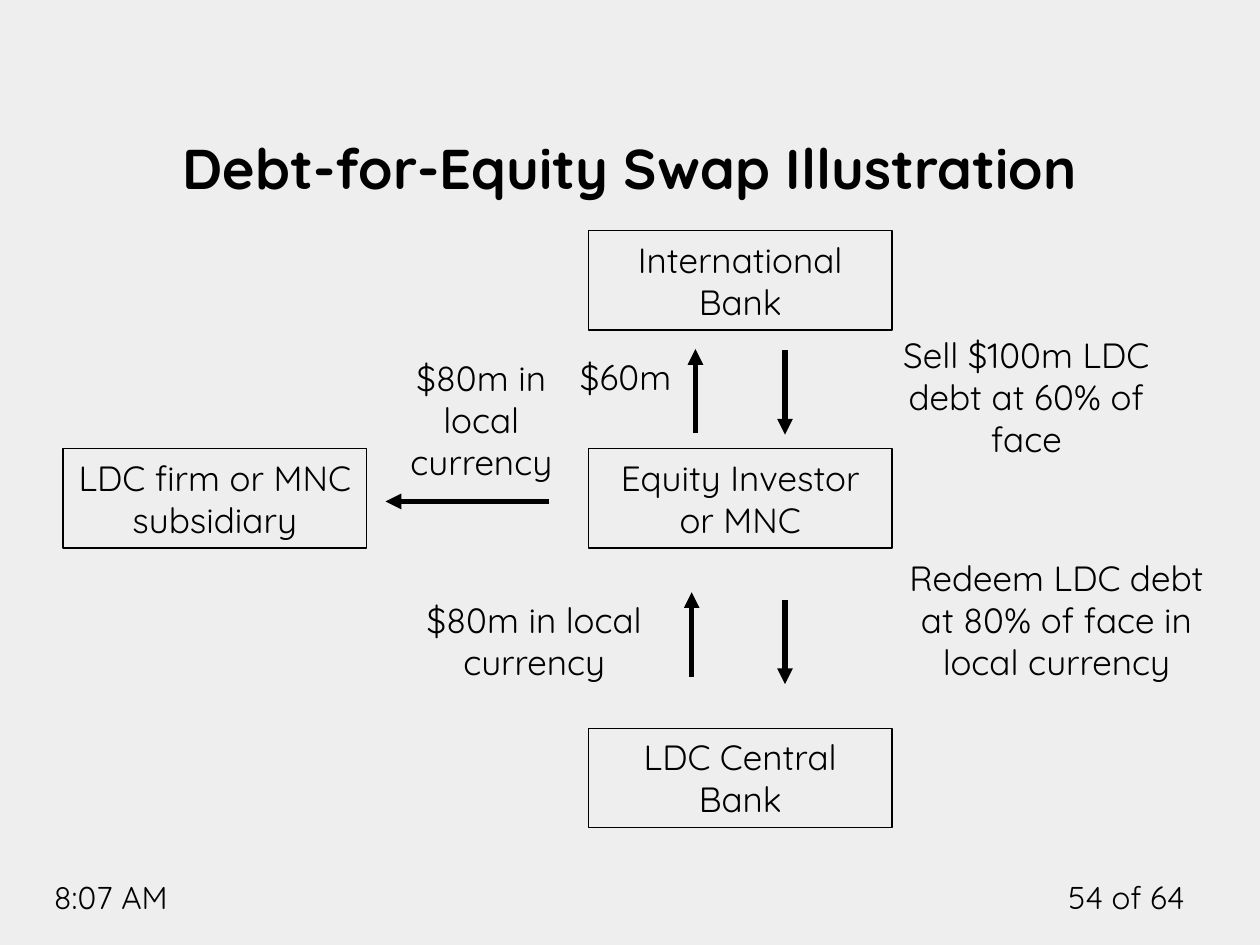
from pptx import Presentation
from pptx.dml.color import RGBColor
from pptx.enum.shapes import MSO_CONNECTOR, MSO_SHAPE
from pptx.enum.text import MSO_ANCHOR, PP_ALIGN
from pptx.oxml.ns import qn
from pptx.util import Inches, Pt
from lxml import etree

LEFT, CENTER, RIGHT = PP_ALIGN.LEFT, PP_ALIGN.CENTER, PP_ALIGN.RIGHT
TOP, BOTTOM = MSO_ANCHOR.TOP, MSO_ANCHOR.BOTTOM
RECTANGLE = MSO_SHAPE.RECTANGLE
STRAIGHT = MSO_CONNECTOR.STRAIGHT

THEME = {
    "font": "Quicksand",
    "ink": RGBColor(0x00, 0x00, 0x00),
    "background": RGBColor(0xEE, 0xEE, 0xEE),
    "title": 32, "body": 20, "footer": 18,
    "border": 0.75, "arrow": 3,
}

# Content: text and position in inches
TITLE = ("Debt-for-Equity Swap Illustration", (0.5, 0.39, 9, 1.25))
FOOTERS = [
    ("8:07 AM", (0.33, 6.92, 1.58, 0.4), LEFT),
    ("54 of 64", (8.33, 6.92, 1.17, 0.4), RIGHT),
]

PARTY_SIZE = (2.41, 0.79)
FIRM_LEFT, CHAIN_LEFT = 0.5, 4.67
INVESTOR_TOP = 3.56
PARTIES = [
    ("International Bank", CHAIN_LEFT, 1.83),
    ("Equity Investor or MNC", CHAIN_LEFT, INVESTOR_TOP),
    ("LDC Central Bank", CHAIN_LEFT, 5.78),
    ("LDC firm or MNC subsidiary", FIRM_LEFT, INVESTOR_TOP),
]

# Each flow: label, label position, arrow start, arrow run (across, down)
REACH = 0.67
UP, DOWN, ACROSS = (0, -REACH), (0, REACH), (-1.3, 0)
FLOWS = [
    ("$60m", (4.41, 2.77, 1.11, 0.44), (5.52, 3.44), UP),
    ("Sell $100m LDC debt at 60% of face", (6.94, 2.6, 2.41, 1.11), (6.23, 2.78), DOWN),
    ("Redeem LDC debt at 80% of face in local currency",
     (7.04, 4.37, 2.69, 1.45), (6.23, 4.76), DOWN),
    ("$80m in local currency", (3.08, 4.7, 2.32, 0.77), (5.49, 5.37), UP),
    ("$80m in local currency", (2.91, 2.78, 1.82, 1.11), (4.36, 3.98), ACROSS),
]


def write(shape, text, size, align=CENTER, anchor=TOP, bold=False):
    frame = shape.text_frame
    frame.word_wrap = True
    frame.vertical_anchor = anchor
    frame.text = text
    para = frame.paragraphs[0]
    para.alignment = align
    font = para.runs[0].font
    font.name, font.size, font.bold = THEME["font"], Pt(size), bold
    font.color.rgb = THEME["ink"]


def add_label(page, text, place, size, **style):
    box = page.shapes.add_textbox(*map(Inches, place))
    write(box, text, size, **style)


def add_party(page, text, left, top):
    box = page.shapes.add_shape(RECTANGLE, *map(Inches, (left, top, *PARTY_SIZE)))
    box.shadow.inherit = False
    box.fill.background()
    box.line.color.rgb = THEME["ink"]
    box.line.width = Pt(THEME["border"])
    frame = box.text_frame
    frame.margin_left = frame.margin_right = Inches(0.11)
    frame.margin_top = frame.margin_bottom = Inches(0.06)
    write(box, text, THEME["body"])


def add_arrow(page, start, run):
    end = (start[0] + run[0], start[1] + run[1])
    arrow = page.shapes.add_connector(STRAIGHT, *map(Inches, start + end))
    arrow.line.color.rgb = THEME["ink"]
    arrow.line.width = Pt(THEME["arrow"])
    etree.SubElement(arrow.line._get_or_add_ln(), qn("a:tailEnd"), type="triangle")
    etree.SubElement(arrow._element.spPr, qn("a:effectLst"))


def main():
    deck = Presentation()
    deck.slide_width, deck.slide_height = Inches(10), Inches(7.5)
    page = deck.slides.add_slide(deck.slide_layouts[6])
    page.background.fill.solid()
    page.background.fill.fore_color.rgb = THEME["background"]

    # Title and footers
    add_label(page, *TITLE, THEME["title"], anchor=BOTTOM, bold=True)
    for text, place, align in FOOTERS:
        add_label(page, text, place, THEME["footer"], align=align)

    # Parties to the swap
    for party in PARTIES:
        add_party(page, *party)

    # Flows between them
    for text, place, start, run in FLOWS:
        add_arrow(page, start, run)
        add_label(page, text, place, THEME["body"])

    deck.save("out.pptx")


if __name__ == "__main__":
    main()
